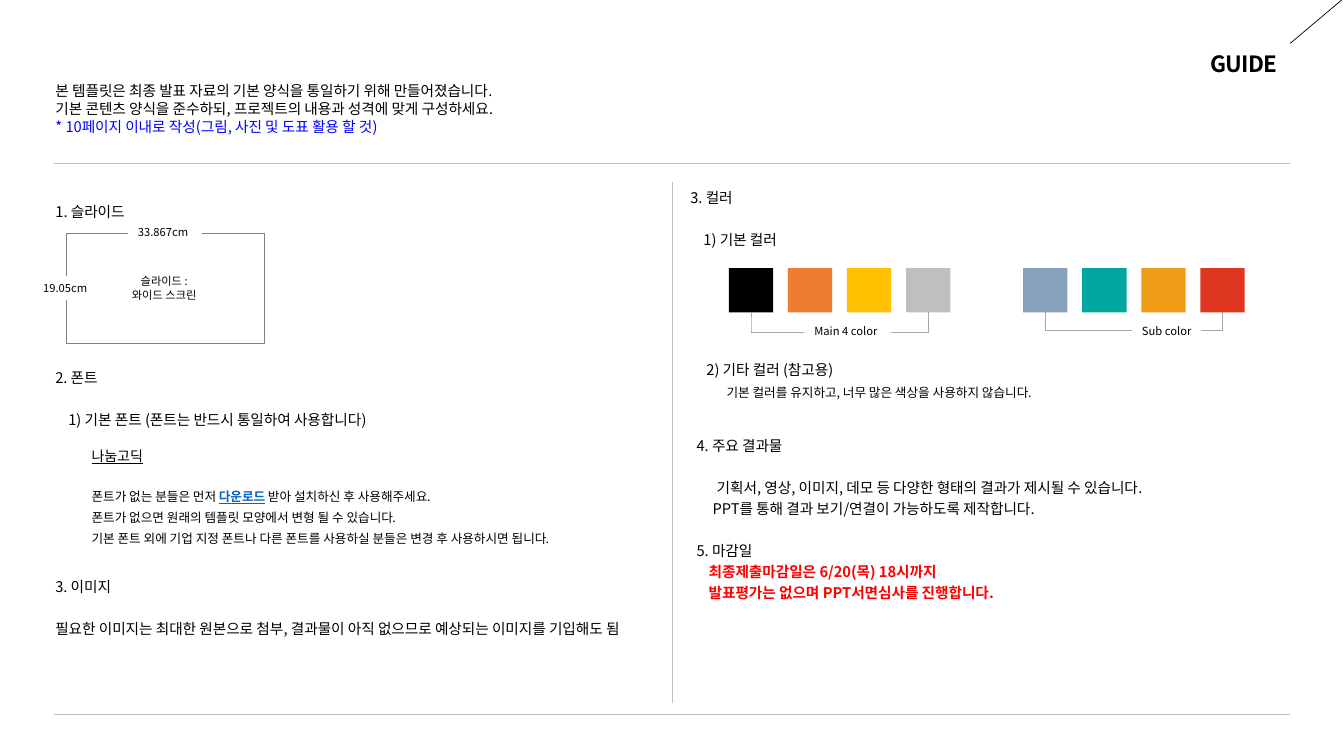
from dataclasses import dataclass
from lxml import etree
from pptx import Presentation
from pptx import util as u
from pptx.dml.color import RGBColor
from pptx.enum import shapes, text
from pptx.oxml.ns import qn


@dataclass(frozen=True)
class Theme:
    font: str = "Noto Sans CJK KR"
    ink: str = "000000"
    paper: str = "FFFFFF"
    note: str = "0000FF"
    link: str = "0563C1"
    alert: str = "FF0000"
    rule: str = "BFBFBF"
    bracket: str = "A6A6A6"
    frame: str = "808080"
    title: float = 16
    body: float = 10.5
    sample: float = 10
    detail: float = 9
    label: float = 8
    pitch: float = 15
    leading: float = 1.22


THEME = Theme()
COLUMNS, ROWS = 133.33, 75
WIDTH, HEIGHT = u.Inches(13.33), u.Inches(7.5)

TITLE = ("GUIDE", (119.1, 4.4, 11, 4.3))
INTRO = ((4.5, 7.6, 62.2, 14.9), [
    ("본 템플릿은 최종 발표 자료의 기본 양식을 통일하기 위해 만들어졌습니다.", {}),
    ("기본 콘텐츠 양식을 준수하되, 프로젝트의 내용과 성격에 맞게 구성하세요.", {}),
    ("* 10페이지 이내로 작성(그림, 사진 및 도표 활용 할 것)", {"color": THEME.note}),
    ("1. 슬라이드", {"before": 48}),
])
DEADLINE = {"color": THEME.alert, "bold": True, "indent": 1.2}
RESULTS = ((68.1, 42.5, 62.2, 17.8), [
    ("4. 주요 결과물", {}),
    ("기획서, 영상, 이미지, 데모 등 다양한 형태의 결과가 제시될 수 있습니다.",
     {"before": 15, "indent": 2}),
    ("PPT를 통해 결과 보기/연결이 가능하도록 제작합니다.", {"indent": 1.6}),
    ("5. 마감일", {"before": 15}),
    ("최종제출마감일은 6/20(목) 18시까지", DEADLINE),
    ("발표평가는 없으며 PPT서면심사를 진행합니다.", DEADLINE),
])
SECTIONS = [
    ((4.5, 35.8, 62.2, 11.5), THEME.body, [
        ("2. 폰트", {}),
        ("1) 기본 폰트 (폰트는 반드시 통일하여 사용합니다)", {"before": 15, "indent": 1.3}),
    ]),
    ((8.1, 43.9, 12.7, 2.7), THEME.sample, [("나눔고딕", {"underline": True})]),
    ((8.1, 47.4, 54, 7.1), THEME.detail, [
        ([("폰트가 없는 분들은 먼저 ", {}),
          ("다운로드", {"color": THEME.link, "bold": True, "underline": True}),
          (" 받아 설치하신 후 사용해주세요.", {})], {}),
        ("폰트가 없으면 원래의 템플릿 모양에서 변형 될 수 있습니다.", {}),
        ("기본 폰트 외에 기업 지정 폰트나 다른 폰트를 사용하실 분들은 변경 후 사용하시면 됩니다.", {}),
    ]),
    ((4.5, 56.5, 62.2, 7.3), THEME.body, [
        ("3. 이미지", {}),
        ("필요한 이미지는 최대한 원본으로 첨부, 결과물이 아직 없으므로 예상되는 이미지를 기입해도 됨",
         {"before": 15}),
    ]),
    ((67.5, 17.9, 62.2, 7.1), THEME.body, [
        ("3. 컬러", {}),
        ("1) 기본 컬러", {"before": 15, "indent": 1.3}),
    ]),
    ((69.1, 35, 60.5, 5.2), THEME.body, [
        ("2) 기타 컬러 (참고용)", {}),
        ("기본 컬러를 유지하고, 너무 많은 색상을 사용하지 않습니다.",
         {"size": THEME.detail, "indent": 2}),
    ]),
]
SLIDE_FRAME = (6.6, 23.1, 19.6, 10.9)
FRAME_LABELS = [
    (["33.867cm"], (12.7, 21.8, 7.3, 2.4)),
    (["19.05cm"], (3.3, 27.4, 6.6, 2.4)),
    (["슬라이드 :", "와이드 스크린"], (12, 26.7, 8.6, 3.7)),
]
SWATCH_TOP, SWATCH_SIZE, SWATCH_PITCH = 26.6, 4.4, 5.86
PALETTES = [
    (72.3, ["000000", "ED7D31", "FFC000", "BFBFBF"], 2, "Main 4 color", (79.8, 31.6, 8.6, 2.4)),
    (101.5, ["87A0BB", "00A7A0", "F19C16", "DF361F"], 1.8, "Sub color", (112.3, 31.6, 6.9, 2.4)),
]
RULES = [
    ((66.7, 18.1), (66.7, 69.7), THEME.rule),
    ((133.1, 0), (128, 4.3), THEME.ink),
    ((5.4, 16.2), (128, 16.2), THEME.rule),
    ((5.4, 70.9), (128, 70.9), THEME.rule),
]


def across(columns):
    return round(WIDTH * columns / COLUMNS)


def down(rows):
    return round(HEIGHT * rows / ROWS)


def cells(area):
    left, top, width, height = area
    return across(left), down(top), across(width), down(height)


def write(part, lines, size=THEME.body, pitch=None, align=text.PP_ALIGN.LEFT,
          anchor=text.MSO_ANCHOR.TOP, wrap=True, **base):
    frame = part.text_frame
    frame.auto_size = text.MSO_AUTO_SIZE.NONE
    frame.word_wrap = wrap
    frame.vertical_anchor = anchor
    frame.margin_left = frame.margin_right = u.Inches(0.1)
    frame.margin_top = frame.margin_bottom = u.Inches(0.05)
    for number, (content, line_style) in enumerate(lines):
        paragraph = frame.paragraphs[0] if number == 0 else frame.add_paragraph()
        style = {"size": size, **base, **line_style}
        paragraph.alignment = align
        paragraph.line_spacing = u.Pt(pitch or round(style["size"] * THEME.leading, 2))
        paragraph.space_before = u.Pt(style.get("before", 0))
        paragraph.space_after = u.Pt(0)
        properties = paragraph._p.get_or_add_pPr()
        properties.set("marL", str(across(style.get("indent", 0))))
        properties.set("indent", "0")
        etree.SubElement(properties, qn("a:buNone"))
        runs = [(content, {})] if isinstance(content, str) else content
        for words, run_style in runs:
            look = {**style, **run_style}
            run = paragraph.add_run()
            run.text = words
            font = run.font
            font.name = THEME.font
            font.size = u.Pt(look["size"])
            font.bold = look.get("bold", False)
            font.underline = look.get("underline", False)
            font.color.rgb = RGBColor.from_string(look.get("color", THEME.ink))
            etree.SubElement(run._r.rPr, qn("a:ea")).set("typeface", THEME.font)
            if "tracking" in look:
                run._r.rPr.set("spc", str(look["tracking"]))


def place(part, area):
    part.left, part.top, part.width, part.height = cells(area)
    return part


def draw(slide, kind, area, fill=None, line=None, weight=0.5):
    drawn = slide.shapes.add_shape(kind, *cells(area))
    drawn.shadow.inherit = False
    if fill:
        drawn.fill.solid()
        drawn.fill.fore_color.rgb = RGBColor.from_string(fill)
    else:
        drawn.fill.background()
    if line:
        drawn.line.color.rgb = RGBColor.from_string(line)
        drawn.line.width = u.Pt(weight)
    else:
        drawn.line.fill.background()
    return drawn


def label(slide, lines, area, **style):
    backing = draw(slide, shapes.MSO_SHAPE.RECTANGLE, area, THEME.paper)
    write(backing, [(line, {}) for line in lines], size=THEME.label,
          anchor=text.MSO_ANCHOR.MIDDLE, wrap=False, **style)


def draw_palette(slide, left, colors, depth, caption, caption_area):
    for number, color in enumerate(colors):
        draw(slide, shapes.MSO_SHAPE.RECTANGLE,
             (left + number * SWATCH_PITCH, SWATCH_TOP, SWATCH_SIZE, SWATCH_SIZE), color)
    span = SWATCH_PITCH * (len(colors) - 1)
    center_x = left + (span + SWATCH_SIZE) / 2
    center_y = SWATCH_TOP + SWATCH_SIZE + depth / 2
    bracket = draw(slide, shapes.MSO_SHAPE.RIGHT_BRACKET,
                   (center_x - depth / 2, center_y - span / 2, depth, span), line=THEME.bracket)
    bracket.adjustments[0] = 0
    bracket.rotation = 90
    label(slide, [caption], caption_area)


def draw_rule(slide, start, end, color):
    rule = slide.shapes.add_connector(
        shapes.MSO_CONNECTOR.STRAIGHT,
        across(start[0]), down(start[1]), across(end[0]), down(end[1]))
    rule.line.color.rgb = RGBColor.from_string(color)
    rule.line.width = u.Pt(0.5)
    etree.SubElement(rule._element.spPr, qn("a:effectLst"))


def main():
    deck = Presentation()
    deck.slide_width, deck.slide_height = WIDTH, HEIGHT
    slide = deck.slides.add_slide(deck.slide_layouts[3])
    title, intro, results = [slide.placeholders[number] for number in range(3)]

    heading, title_area = TITLE
    write(place(title, title_area), [(heading, {})], size=THEME.title, bold=True, tracking=-50)
    write(place(intro, INTRO[0]), INTRO[1])
    write(place(results, RESULTS[0]), RESULTS[1], pitch=THEME.pitch)

    draw(slide, shapes.MSO_SHAPE.RECTANGLE, SLIDE_FRAME, line=THEME.frame, weight=0.25)
    for lines, area in FRAME_LABELS:
        align = text.PP_ALIGN.CENTER if len(lines) > 1 else text.PP_ALIGN.LEFT
        label(slide, lines, area, align=align)
    for palette in PALETTES:
        draw_palette(slide, *palette)
    for area, size, lines in SECTIONS:
        section = slide.shapes.add_textbox(*cells(area))
        write(section, lines, size=size, pitch=THEME.pitch if len(lines) > 1 else None)
    for rule in RULES:
        draw_rule(slide, *rule)
    deck.save("out.pptx")


if __name__ == "__main__":
    main()
